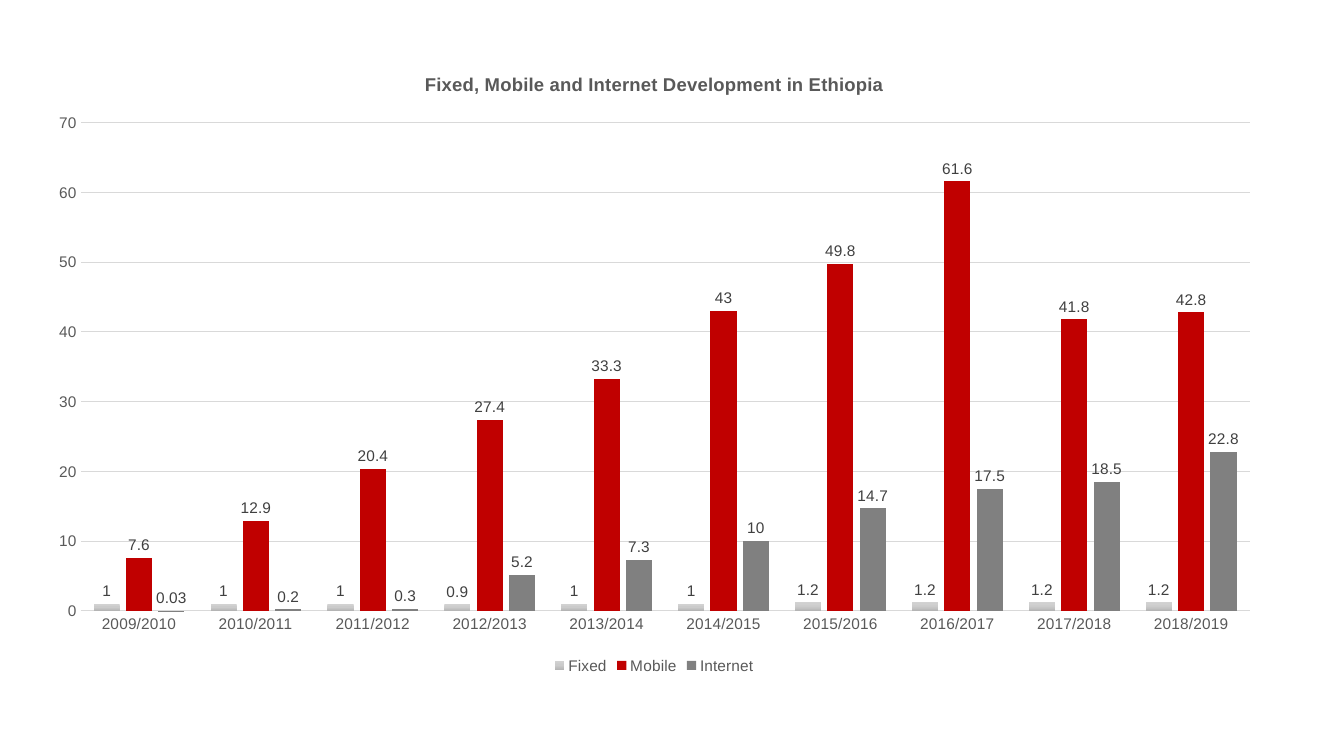
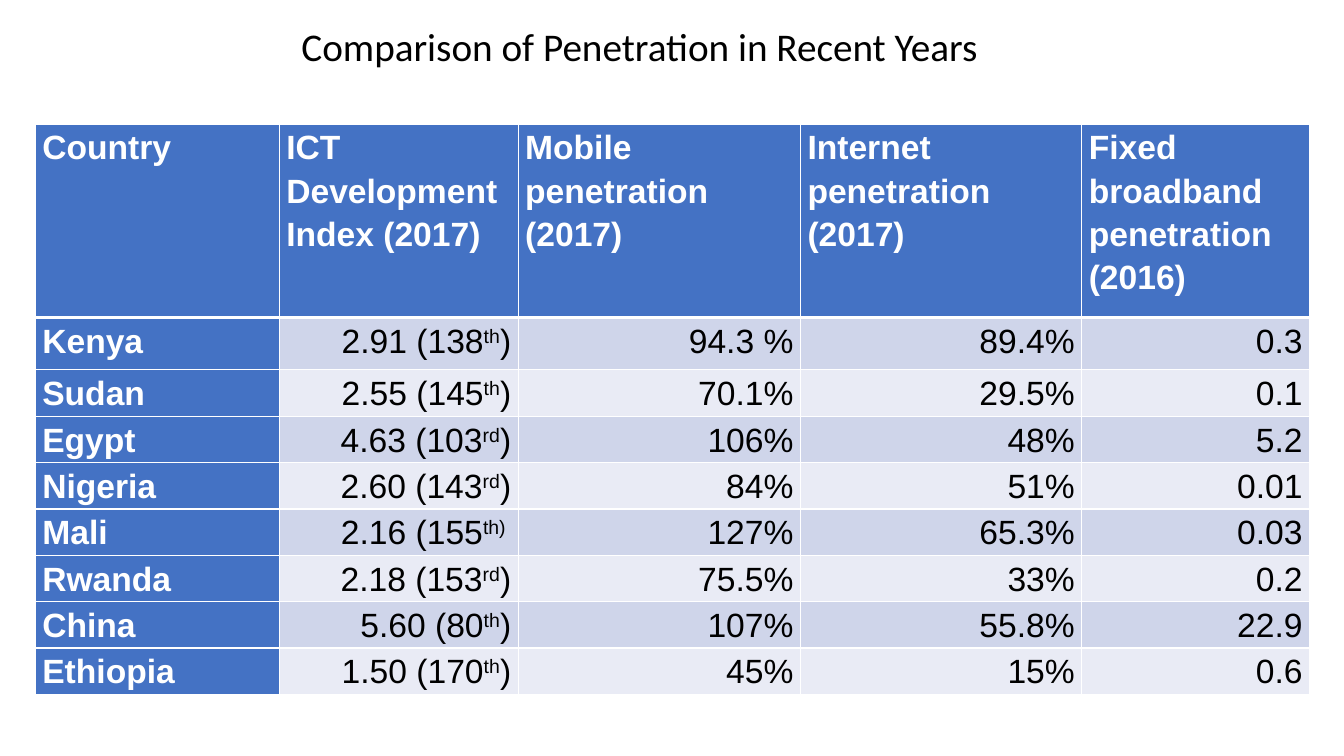
"""Build two slides on telecom development: a column chart and a country table."""
from copy import deepcopy
from dataclasses import dataclass

from lxml.etree import SubElement
from pptx import Presentation
from pptx.chart.data import CategoryChartData
from pptx.dml.color import RGBColor as RGB
from pptx.enum.chart import XL_CHART_TYPE as ChartType
from pptx.enum.chart import XL_LABEL_POSITION as LabelPosition
from pptx.enum.chart import XL_LEGEND_POSITION as LegendPosition
from pptx.enum.chart import XL_TICK_MARK as TickMark
from pptx.enum.text import MSO_ANCHOR as Anchor
from pptx.enum.text import MSO_AUTO_SIZE as AutoSize
from pptx.enum.text import PP_ALIGN as Align
from pptx.oxml.ns import qn
from pptx.util import Inches, Pt


@dataclass(frozen=True)
class Theme:
    title_font: str = "Calibri"
    body_font: str = "Arial"
    title_size: float = 28
    table_size: float = 24
    chart_title_size: float = 13.2
    chart_size: float = 11
    black: str = "000000"
    white: str = "FFFFFF"
    blue: str = "4472C4"
    bands: tuple = ("CFD5EA", "E9EBF5")
    axis_text: str = "595959"
    label_text: str = "404040"
    grid: str = "D9D9D9"
    red: str = "C00000"
    gray: str = "808080"
    silver: tuple = ((0, "D2D2D2"), (0.5, "CBCBCB"), (1, "B4B4B4"))


theme = Theme()


def style_font(font, name, size, color, bold=False):
    font.name = name
    font.size = Pt(size)
    font.bold = bold
    font.color.rgb = RGB.from_string(color)


def add_border(cell, side, width):
    line = SubElement(cell._tc.get_or_add_tcPr(), qn(f"a:ln{side}"), w=str(Pt(width)))
    fill = SubElement(line, qn("a:solidFill"))
    SubElement(fill, qn("a:srgbClr"), val=theme.white)


deck = Presentation()
deck.slide_width = Inches(13.33)
deck.slide_height = Inches(7.5)
title_only, blank = deck.slide_layouts[5], deck.slide_layouts[6]

page = deck.slides.add_slide(blank)
data = CategoryChartData()
data.categories = [f"{year}/{year + 1}" for year in range(2009, 2019)]
data.add_series("Fixed", (1, 1, 1, 0.9, 1, 1, 1.2, 1.2, 1.2, 1.2))
data.add_series("Mobile", (7.6, 12.9, 20.4, 27.4, 33.3, 43, 49.8, 61.6, 41.8, 42.8))
data.add_series("Internet", (0.03, 0.2, 0.3, 5.2, 7.3, 10, 14.7, 17.5, 18.5, 22.8))
chart = page.shapes.add_chart(
    ChartType.COLUMN_CLUSTERED, Inches(0.34), Inches(0.51), Inches(12.3), Inches(6.22), data
).chart
style_font(chart.font, theme.body_font, theme.chart_size, theme.black)

chart.has_title = True
para = chart.chart_title.text_frame.paragraphs[0]
para.text = "Fixed, Mobile and Internet Development in Ethiopia"
style_font(para.runs[0].font, theme.body_font, theme.chart_title_size, theme.axis_text, True)
chart.chart_title.include_in_layout = False

chart.has_legend = True
chart.legend.position = LegendPosition.BOTTOM
chart.legend.include_in_layout = False
style_font(chart.legend.font, theme.body_font, theme.chart_size, theme.axis_text)

for axis in (chart.category_axis, chart.value_axis):
    axis.major_tick_mark = axis.minor_tick_mark = TickMark.NONE
    style_font(axis.tick_labels.font, theme.body_font, theme.chart_size, theme.axis_text)
category_line = chart.category_axis.format.line
category_line.color.rgb = RGB.from_string(theme.grid)
category_line.width = Pt(1)
value_axis = chart.value_axis
value_axis.format.line.fill.background()
value_axis.minimum_scale, value_axis.maximum_scale, value_axis.major_unit = 0, 70, 10
grid_line = value_axis.major_gridlines.format.line
grid_line.color.rgb = RGB.from_string(theme.grid)
grid_line.width = Pt(0.75)

plot = chart.plots[0]
plot.vary_by_categories = False
plot.gap_width = 100
plot.overlap = -24
for series in plot.series:
    labels = series.data_labels
    labels.show_value = True
    labels.position = LabelPosition.OUTSIDE_END
    style_font(labels.font, theme.body_font, theme.chart_size, theme.label_text)

fixed, mobile, internet = plot.series
for series, color in ((mobile, theme.red), (internet, theme.gray)):
    series.format.fill.solid()
    series.format.fill.fore_color.rgb = RGB.from_string(color)
gradient = fixed.format.fill
gradient.gradient()
gradient.gradient_angle = 270
stop_list = fixed._element.find(".//" + qn("a:gsLst"))
stop_list.append(deepcopy(stop_list[0]))
for stop, (position, color) in zip(gradient.gradient_stops, theme.silver):
    stop.position = position
    stop.color.rgb = RGB.from_string(color)

page = deck.slides.add_slide(title_only)
title = page.shapes.title
title.left, title.top = Inches(2.89), Inches(0.17)
title.width, title.height = Inches(6.98), Inches(0.57)
frame = title.text_frame
frame.text = "Comparison of Penetration in Recent Years"
frame.word_wrap = False
frame.auto_size = AutoSize.NONE
frame.vertical_anchor = Anchor.TOP
para = frame.paragraphs[0]
para.alignment = Align.LEFT
style_font(para.runs[0].font, theme.title_font, theme.title_size, theme.black)

rows = (
    ("Country", "ICT Development Index (2017)", "Mobile penetration (2017)",
     "Internet penetration (2017)", "Fixed broadband penetration (2016)"),
    ("Kenya", "2.91 (138^th^)", "94.3 %", "89.4%", "0.3"),
    ("Sudan", "2.55 (145^th^)", "70.1%", "29.5%", "0.1"),
    ("Egypt", "4.63 (103^rd^)", "106%", "48%", "5.2"),
    ("Nigeria", "2.60 (143^rd^)", "84%", "51%", "0.01"),
    ("Mali", "2.16 (155^th) ", "127%", "65.3%", "0.03"),
    ("Rwanda", "2.18 (153^rd^)", "75.5%", "33%", "0.2"),
    ("China", "5.60 (80^th^)", "107%", "55.8%", "22.9"),
    ("Ethiopia", "1.50 (170^th^)", "45%", "15%", "0.6"),
)
widths = (2.42, 2.37, 2.8, 2.79, 2.26)
heights = [1.92, 0.52] + [0.46] * 7
table = page.shapes.add_table(
    len(rows), len(widths), Inches(0.35), Inches(1.23), Inches(12.63), Inches(5.63)
).table
for column, width in zip(table.columns, widths):
    column.width = Inches(width)

for row_index, (row, height) in enumerate(zip(rows, heights)):
    table.rows[row_index].height = Inches(height)
    for column_index, text in enumerate(row):
        cell = table.cell(row_index, column_index)
        heading = row_index == 0 or column_index == 0
        cell.margin_left = cell.margin_right = Inches(0.07)
        cell.margin_top = cell.margin_bottom = 0
        for side in "LRTB":
            under_header = (row_index, side) in ((0, "B"), (1, "T"))
            add_border(cell, side, 3 if under_header else 1)
        cell.fill.solid()
        color = theme.blue if heading else theme.bands[(row_index - 1) % 2]
        cell.fill.fore_color.rgb = RGB.from_string(color)
        para = cell.text_frame.paragraphs[0]
        para.alignment = Align.JUSTIFY if heading else Align.RIGHT
        para.line_spacing = 1.15
        for part_index, part in enumerate(text.split("^")):
            span = para.add_run()
            span.text = part
            style_font(span.font, theme.body_font, theme.table_size,
                       theme.white if heading else theme.black, heading)
            if part_index == 1:
                span._r.get_or_add_rPr().set("baseline", "30000")

deck.save("out.pptx")
